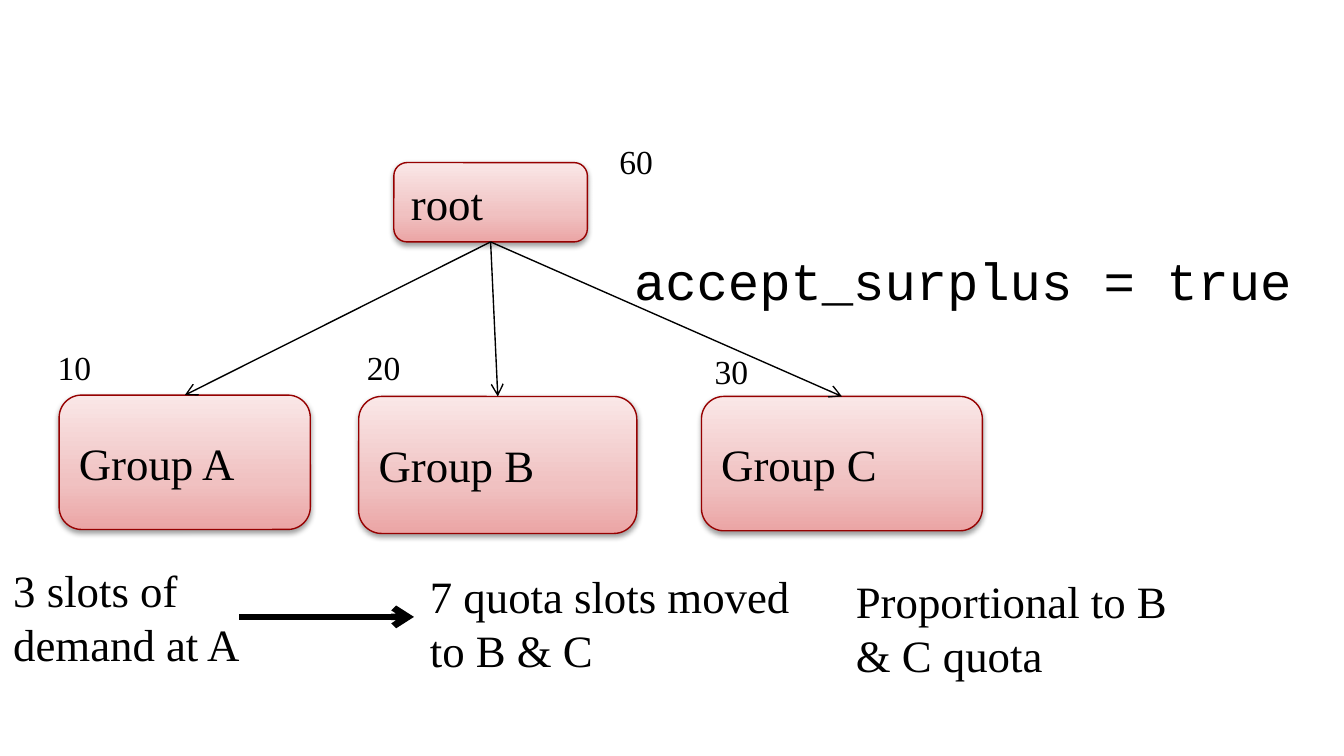
"""Build a slide on surplus quota shared between three groups."""
from copy import deepcopy
from typing import NamedTuple

from lxml import etree
from pptx import Presentation
from pptx.dml.color import RGBColor
from pptx.enum import shapes, text
from pptx.oxml import ns
from pptx.util import Pt

SERIF = "Times New Roman"
MONO = "Courier New"
BLACK = "000000"
BORDER = "960000"
GRADIENT = [(0, "EBA5A5"), (0.35, "F0C1C1"), (1, "FAE7E7")]


class Node(NamedTuple):
    name: str
    left: float
    top: float
    width: float
    height: float


class Label(NamedTuple):
    wording: str
    left: float
    top: float
    width: float
    height: float
    size: float = 24
    font: str = SERIF
    wrap: bool = True


def quota(amount: int, left: float, top: float) -> Label:
    return Label(str(amount), left, top, 32.4, 28.8, size=18, wrap=False)


ROOT = Node("root", 211, 87.1, 103.7, 42.5)
GROUPS = [
    Node("Group A", 31.7, 211.7, 134.6, 72),
    Node("Group B", 192.2, 212.4, 149, 73.4),
    Node("Group C", 375.8, 212.4, 150.5, 72),
]
LABELS = [
    quota(60, 324.7, 72),
    quota(10, 23.8, 182.2),
    quota(20, 189.4, 182.2),
    quota(30, 375.8, 184.3),
    Label("accept_surplus = true", 332.6, 129.6, 387.4, 41, size=28, font=MONO),
    Label("3 slots of demand at A", 0, 298.1, 167, 65.5),
    Label("7 quota slots moved to B & C", 223.2, 301, 219.6, 65.5),
    Label("Proportional to B & C quota", 451.4, 303.8, 188.6, 65.5),
]


def rgb(value: str) -> RGBColor:
    return RGBColor.from_string(value)


def add_child(parent, tag: str, **attributes: str):
    return etree.SubElement(parent, ns.qn(tag), attributes)


def write(frame, wording: str, size: float, font: str) -> None:
    frame.text = wording
    paragraph = frame.paragraphs[0]
    paragraph.alignment = text.PP_ALIGN.LEFT
    run_font = paragraph.runs[0].font
    run_font.name = font
    run_font.size = Pt(size)
    run_font.color.rgb = rgb(BLACK)


def fill_gradient(box) -> None:
    box.fill.gradient()
    box.fill.gradient_angle = 90
    stop_list = box._element.spPr.find(".//" + ns.qn("a:gsLst"))
    stop_list.append(deepcopy(stop_list[-1]))
    for stop, (position, color) in zip(box.fill.gradient_stops, GRADIENT):
        stop.position = position
        stop.color.rgb = rgb(color)


def cast_shadow(box) -> None:
    box.shadow.inherit = False
    effects = box._element.spPr.find(ns.qn("a:effectLst"))
    shadow = add_child(effects, "a:outerShdw", blurRad=str(Pt(3.1)),
                       dist=str(Pt(1.6)), dir="5400000", rotWithShape="0")
    color = add_child(shadow, "a:srgbClr", val=BLACK)
    add_child(color, "a:alpha", val="38000")


def draw_node(slide, node: Node):
    box = slide.shapes.add_shape(shapes.MSO_SHAPE.ROUNDED_RECTANGLE,
                                 *map(Pt, node[1:]))
    fill_gradient(box)
    box.line.color.rgb = rgb(BORDER)
    box.line.width = Pt(0.75)
    cast_shadow(box)
    box.text_frame.vertical_anchor = text.MSO_ANCHOR.MIDDLE
    write(box.text_frame, node.name, 24, SERIF)
    return box


def draw_arrow(slide, start: tuple[float, float], end: tuple[float, float],
               width: float):
    arrow = slide.shapes.add_connector(shapes.MSO_CONNECTOR.STRAIGHT,
                                       *map(Pt, start + end))
    arrow.line.color.rgb = rgb(BLACK)
    arrow.line.width = Pt(width)
    add_child(arrow.line._get_or_add_ln(), "a:tailEnd", type="arrow")
    add_child(arrow._element.spPr, "a:effectLst")
    return arrow


def draw_label(slide, label: Label) -> None:
    box = slide.shapes.add_textbox(*map(Pt, label[1:5]))
    box.text_frame.word_wrap = label.wrap
    box.text_frame.auto_size = text.MSO_AUTO_SIZE.SHAPE_TO_FIT_TEXT
    write(box.text_frame, label.wording, label.size, label.font)


def main() -> None:
    deck = Presentation()
    deck.slide_width, deck.slide_height = Pt(720), Pt(405)
    slide = deck.slides.add_slide(deck.slide_layouts.get_by_name("Blank"))

    root = draw_node(slide, ROOT)
    for node in GROUPS:
        group = draw_node(slide, node)
        branch = draw_arrow(slide, (0, 0), (1, 1), 0.75)
        branch.begin_connect(root, 2)
        branch.end_connect(group, 0)
    for label in LABELS:
        draw_label(slide, label)
    draw_arrow(slide, (128.2, 330.5), (221.8, 330.5), 3.5)

    deck.save("out.pptx")


if __name__ == "__main__":
    main()
